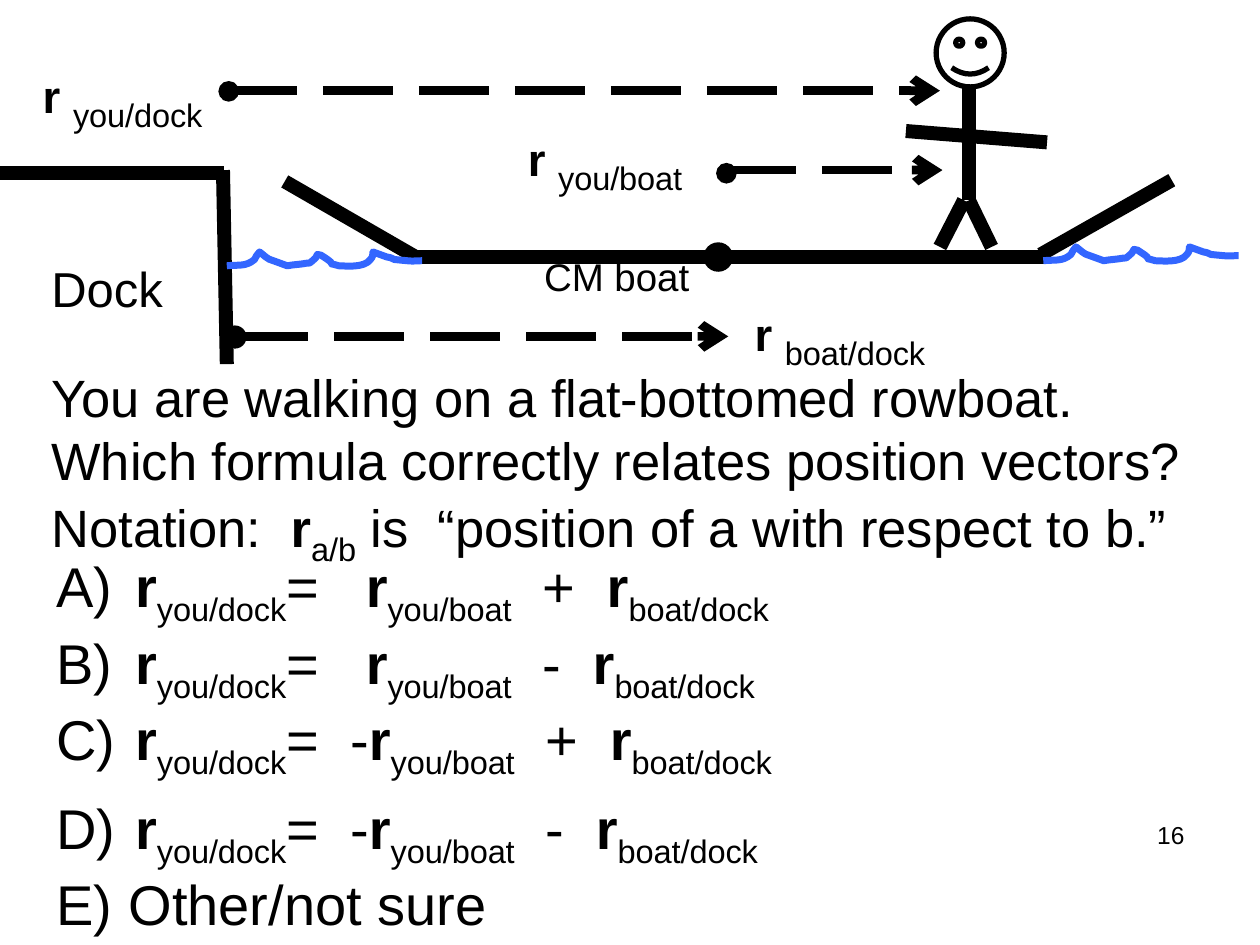
from lxml import etree
from pptx import Presentation
from pptx.dml.color import RGBColor as RGB
from pptx.enum.dml import MSO_LINE as Dash
from pptx.enum.shapes import MSO_CONNECTOR as Link, MSO_SHAPE as Form
from pptx.enum.text import MSO_AUTO_SIZE as Fit, PP_ALIGN as Align
from pptx.oxml.ns import qn
from pptx.util import Inches, Pt

BLACK, BLUE = "000000", "3366FF"
BARS = [
    (3.28, 2.04, 8.3, 2.04), (8.26, 2.02, 9.3, 1.43),
    (3.3, 2.04, 2.26, 1.44), (0, 1.37, 1.78, 1.37),
    (1.8, 2.89, 1.77, 1.35), (7.87, 1.96, 7.69, 1.59),
    (7.46, 1.96, 7.65, 1.59), (7.69, 1.59, 7.69, 0.7),
    (8.31, 1.13, 7.19, 1.04),
]
WAVE = [
    [(0.09, -0.01), (0.15, 0.01), (0.22, -0.05)],
    [(0.23, -0.07), (0.24, -0.09), (0.26, -0.11)],
    [(0.29, -0.09), (0.32, -0.05), (0.37, -0.04)],
    [(0.48, 0)],
    [(0.53, -0.01), (0.58, -0.01), (0.63, -0.02)],
    [(0.65, -0.02), (0.67, -0.02), (0.68, -0.04)],
    [(0.7, -0.05), (0.71, -0.07), (0.72, -0.09)],
    [(0.74, -0.09), (0.76, -0.08), (0.77, -0.07)],
    [(0.91, 0.02), (0.75, -0.04), (0.89, 0)],
    [(0.94, 0), (1.09, 0.02), (1.14, -0.05)],
    [(1.16, -0.07), (1.16, -0.09), (1.16, -0.11)],
    [(1.27, -0.07)],
    [(1.29, -0.07), (1.31, -0.06), (1.33, -0.05)],
    [(1.53, -0.03), (1.45, -0.04), (1.55, -0.04)],
]
VECTORS = [
    ("you/dock", 0.24, 0.41, 1.64), ("you/boat", 4.09, 0.91, 1.59),
    ("boat/dock", 5.89, 2.3, 1.74),
]
CHOICES = [("=   ", "  +  "), ("=   ", "  -  "), ("=  -", "  +  "), ("=  -", "  -  ")]


def color(code):
    return RGB.from_string(code)


def apply(item, values):
    for name, value in values.items():
        setattr(item, name, value)


def stroke(item, code, width):
    item.line.color.rgb = color(code)
    item.line.width = Pt(width)


def bar(shapes, ends, width=8):
    line = shapes.add_connector(Link.STRAIGHT, *map(Inches, ends))
    stroke(line, BLACK, width)
    etree.SubElement(line._element.spPr, qn("a:effectLst"))
    return line


def arrow(shapes, *ends):
    line = bar(shapes, ends, 5)
    line.line.dash_style = Dash.LONG_DASH
    etree.SubElement(line.line._get_or_add_ln(), qn("a:tailEnd"), type="arrow")


def disc(shapes, x, y, size, form=Form.OVAL, width=1, fill=BLACK):
    item = shapes.add_shape(form, *map(Inches, (x, y, size, size)))
    item.shadow.inherit = False
    if fill:
        item.fill.solid()
        item.fill.fore_color.rgb = color(fill)
    else:
        item.fill.background()
    stroke(item, BLACK, width)


def bend(item):
    steps = list(item._element.iter(qn("a:lnTo")))
    for part in WAVE:
        group, steps = steps[:len(part)], steps[len(part):]
        if len(group) == 3:
            curve = etree.Element(qn("a:cubicBezTo"))
            group[0].addprevious(curve)
            for step in group:
                curve.append(step[0])
                step.getparent().remove(step)


def wave(shapes, x, y):
    spots = [(Inches(x + a), Inches(y + b)) for part in WAVE for a, b in part]
    trail = shapes.build_freeform(Inches(x), Inches(y))
    trail.add_line_segments(spots, close=False)
    item = trail.convert_to_shape()
    bend(item)
    item.shadow.inherit = False
    item.fill.background()
    stroke(item, BLUE, 4)


def vector(sub, size=32):
    return [("r", {"bold": True, "size": Pt(size)}), (sub, "sub")]


def write(para, parts, size):
    for text, style in parts:
        if text == "\n":
            para.add_line_break()
            continue
        run = para.add_run()
        run.text = text
        sub = style == "sub"
        base = {"name": "Arial", "size": Pt(32 if sub else size), "bold": False}
        apply(run.font, base | ({} if sub else style))
        run.font.color.rgb = color(BLACK)
        if sub:
            run._r.get_or_add_rPr().set("baseline", "-25000")


def label(shapes, box, lines, size, wrap=False, align=Align.LEFT, fit=Fit.SHAPE_TO_FIT_TEXT):
    frame = shapes.add_textbox(*map(Inches, box)).text_frame
    apply(frame, {"word_wrap": wrap, "auto_size": fit})
    for i, parts in enumerate(lines):
        para = frame.add_paragraph() if i else frame.paragraphs[0]
        para.alignment = align
        write(para, parts, size)
    return frame.paragraphs


def letter(para):
    props = para._p.get_or_add_pPr()
    props.set("marL", str(Inches(0.5)))
    props.set("indent", str(Inches(-0.5)))
    etree.SubElement(props, qn("a:buFont"), typeface="Arial")
    etree.SubElement(props, qn("a:buAutoNum"), type="alphaUcParenR")


def scene(shapes):
    for ends in BARS:
        bar(shapes, ends)
    wave(shapes, 1.8, 2.11)
    wave(shapes, 8.28, 2.07)
    disc(shapes, 7.43, 0.15, 0.54, Form.SMILEY_FACE, 3, None)
    arrow(shapes, 1.89, 2.67, 5.78, 2.67)
    disc(shapes, 1.78, 2.59, 0.17)
    disc(shapes, 5.59, 1.93, 0.22)
    for ends, spot in (
        ((5.76, 1.35, 7.48, 1.35), (5.69, 1.3)),
        ((1.8, 0.72, 7.46, 0.72), (1.74, 0.65)),
    ):
        group = shapes.add_group_shape().shapes
        arrow(group, *ends)
        disc(group, *spot, 0.15)


def words(shapes):
    label(shapes, (7.17, 6.46, 2.33, 0.52), [[("16", {})]], 14, True, Align.RIGHT, Fit.NONE)
    label(shapes, (0.31, 2, 1.1, 0.57), [[("Dock", {})]], 28)
    label(shapes, (4.22, 1.96, 1.37, 0.47), [[("CM boat", {})]], 22)
    for sub, x, y, width in VECTORS:
        mark = [("r ", {"bold": True}), (sub, "sub")]
        label(shapes, (x, y, width, 0.54), [mark], 26)
    label(shapes, (0.31, 2.85, 9.69, 1.62), [
        [("You are walking on a flat-bottomed rowboat. ", {}), ("\n", {}),
         ("Which formula correctly relates position vectors?", {})],
        [("Notation:  ", {})] + vector("a/b", 30)
        + [(" is  “position of a with respect to b.”", {})],
    ], 30, True)


def answers(shapes):
    lines = [
        [(" ", {})] + vector("you/dock") + [(sign, {})] + vector("you/boat")
        + [(plus, {})] + vector("boat/dock")
        for sign, plus in CHOICES
    ]
    lines.append([(" ", "sub"), ("Other/not sure", {})])
    paras = label(shapes, (0.35, 4.33, 6.41, 3.23), lines, 32)
    paras[2].space_after = Pt(7)
    for para in paras:
        letter(para)


def main():
    deck = Presentation()
    apply(deck, {"slide_width": Inches(10), "slide_height": Inches(7.5)})
    shapes = deck.slides.add_slide(deck.slide_layouts[6]).shapes
    scene(shapes)
    words(shapes)
    answers(shapes)
    deck.save("out.pptx")


if __name__ == "__main__":
    main()
